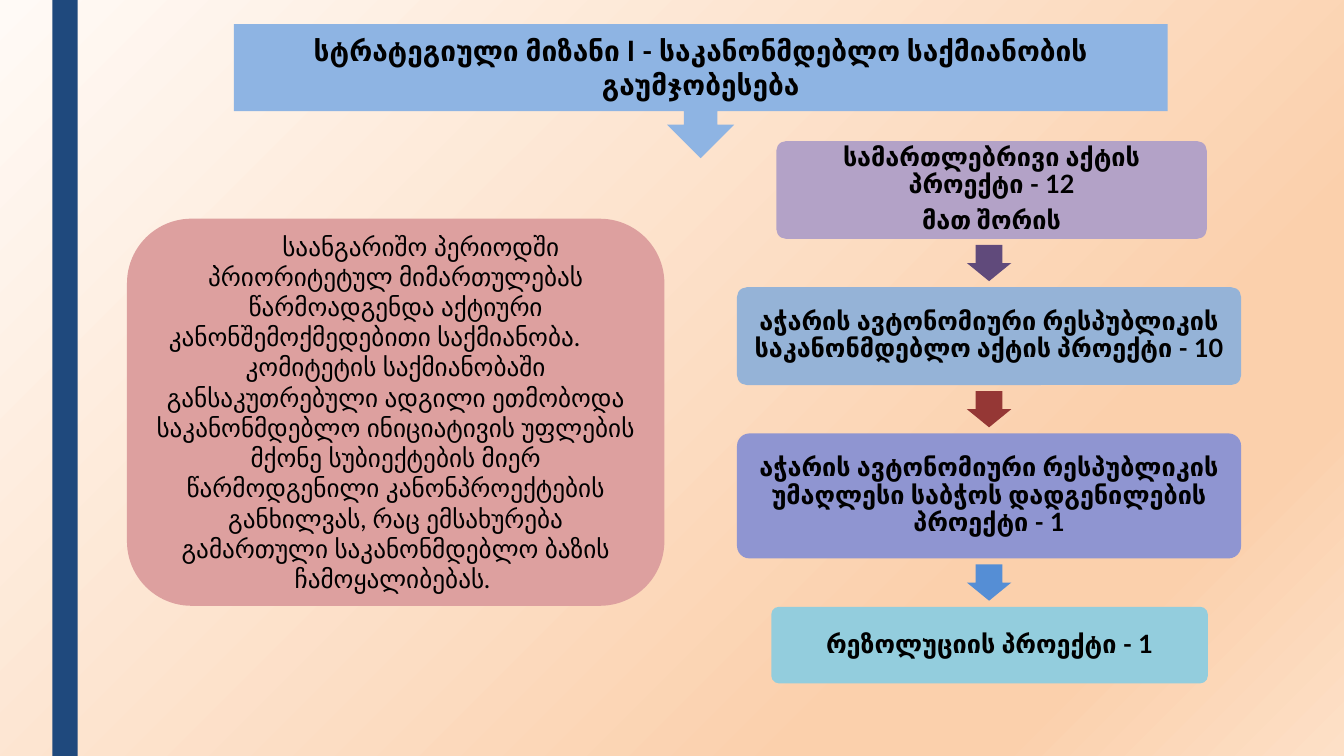
from dataclasses import dataclass
from itertools import zip_longest

from lxml.etree import SubElement
from pptx import Presentation
from pptx.dml.color import RGBColor
from pptx.enum.shapes import MSO_SHAPE
from pptx.enum.text import MSO_ANCHOR, MSO_AUTO_SIZE, PP_ALIGN
from pptx.oxml.ns import qn
from pptx.util import Emu, Pt

EMU_PER_PX = 9144
SLIDE_WIDTH, SLIDE_HEIGHT = 1333, 750


def px(length):
    return Emu(round(length * EMU_PER_PX))


@dataclass(frozen=True)
class Theme:
    font: str = "Lato"
    text: str = "000000"
    title_size: int = 20
    body_size: int = 18
    side_bar: str = "1F497D"
    title_fill: str = "8EB4E3"
    summary_fill: str = "DDA09F"
    step_fills: tuple = ("B3A2C7", "95B3D7", "8F95D1", "93CDDD")
    arrow_fills: tuple = ("604A7B", "953735", "558ED5")
    background: tuple = ((0, "FFFAF6"), (74, "FBD0AC"), (83, "FBD0AC"), (100, "FDE0C7"))


def write_text(shape, paragraphs, *, theme, size, bold=False, margins=(10, 5),
               line_spacing=1.0, space_after=0):
    frame = shape.text_frame
    frame.word_wrap = True
    frame.auto_size = MSO_AUTO_SIZE.NONE
    frame.vertical_anchor = MSO_ANCHOR.MIDDLE
    frame.margin_left = frame.margin_right = px(margins[0])
    frame.margin_top = frame.margin_bottom = px(margins[1])
    for index, text in enumerate(paragraphs):
        paragraph = frame.add_paragraph() if index else frame.paragraphs[0]
        paragraph.alignment = PP_ALIGN.CENTER
        paragraph.line_spacing = line_spacing
        paragraph.space_before = Pt(0)
        paragraph.space_after = Pt(space_after)
        run = paragraph.add_run()
        run.text = text
        run.font.name = theme.font
        run.font.size = Pt(size)
        run.font.bold = bold
        run.font.color.rgb = RGBColor.from_string(theme.text)


class SlideBuilder:
    def __init__(self, slide, theme):
        self.slide = slide
        self.theme = theme

    def background(self):
        fill = self.slide.background.fill
        fill.gradient()
        fill.gradient_angle = 315
        stops = self.slide.element.find(".//" + qn("a:gsLst"))
        for stop in list(stops):
            stops.remove(stop)
        for position, color in self.theme.background:
            stop = SubElement(stops, qn("a:gs"), pos=str(position * 1000))
            SubElement(stop, qn("a:srgbClr"), val=color)

    def shape(self, kind, left, top, width, height, fill, adjustments=()):
        shape = self.slide.shapes.add_shape(kind, px(left), px(top), px(width), px(height))
        shape.shadow.inherit = False
        shape.fill.solid()
        shape.fill.fore_color.rgb = RGBColor.from_string(fill)
        shape.line.fill.background()
        for index, value in enumerate(adjustments):
            shape.adjustments[index] = value
        return shape

    def title(self, text, left, top, width, height):
        title = self.slide.shapes.title
        title.left, title.top = px(left), px(top)
        title.width, title.height = px(width), px(height)
        write_text(title, [text], theme=self.theme, size=self.theme.title_size, bold=True)
        self.slide.shapes.element.append(title.element)

    def summary(self, text, left, top, width, height):
        shape = self.shape(MSO_SHAPE.FLOWCHART_ALTERNATE_PROCESS, left, top, width, height,
                           self.theme.summary_fill)
        write_text(shape, [text], theme=self.theme, size=self.theme.body_size)

    def step(self, paragraphs, left, top, width, height, fill):
        shape = self.shape(MSO_SHAPE.ROUNDED_RECTANGLE, left, top, width, height, fill, [0.1])
        write_text(shape, paragraphs, theme=self.theme, size=self.theme.body_size, bold=True,
                   margins=(10, 10), line_spacing=0.9, space_after=6.3)

    def arrow(self, center_x, center_y, fill):
        width, height = 44, 36
        self.shape(MSO_SHAPE.DOWN_ARROW, center_x - width / 2, center_y - height / 2,
                   width, height, fill, [0.6, 0.5])


STEPS = (
    (("სამართლებრივი აქტის პროექტი - 12", "მათ შორის"), 770, 427, 97),
    (("აჭარის ავტონომიური რესპუბლიკის საკანონმდებლო აქტის პროექტი - 10",), 731, 500, 97),
    (("აჭარის ავტონომიური რესპუბლიკის უმაღლესი საბჭოს დადგენილების პროექტი - 1",), 731, 500, 124),
    (("რეზოლუციის პროექტი - 1",), 765, 433, 76),
)
SUMMARY = (
    "\tსაანგარიშო პერიოდში პრიორიტეტულ მიმართულებას წარმოადგენდა აქტიური "
    "კანონშემოქმედებითი საქმიანობა. \tკომიტეტის საქმიანობაში განსაკუთრებული ადგილი "
    "ეთმობოდა საკანონმდებლო ინიციატივის უფლების მქონე სუბიექტების მიერ წარმოდგენილი "
    "კანონპროექტების განხილვას, რაც ემსახურება გამართული საკანონმდებლო ბაზის ჩამოყალიბებას. "
)


def main():
    presentation = Presentation()
    presentation.slide_width, presentation.slide_height = px(SLIDE_WIDTH), px(SLIDE_HEIGHT)
    theme = Theme()
    builder = SlideBuilder(presentation.slides.add_slide(presentation.slide_layouts[5]), theme)
    builder.background()
    builder.shape(MSO_SHAPE.RECTANGLE, 52, 0, 25, SLIDE_HEIGHT, theme.side_bar)
    builder.shape(MSO_SHAPE.DOWN_ARROW_CALLOUT, 232, 24, 926, 133, theme.title_fill)
    builder.title("სტრატეგიული მიზანი I - საკანონმდებლო საქმიანობის გაუმჯობესება",
                  232, 24, 926, 86)

    top, gap, arrow_center = 140, 48, 981
    for step, fill, arrow_fill in zip_longest(STEPS, theme.step_fills, theme.arrow_fills):
        paragraphs, left, width, height = step
        builder.step(paragraphs, left, top, width, height, fill)
        if arrow_fill:
            builder.arrow(arrow_center, top + height + gap / 2, arrow_fill)
        top += height + gap

    builder.summary(SUMMARY, 126, 217, 533, 384)
    presentation.save("out.pptx")


if __name__ == "__main__":
    main()
